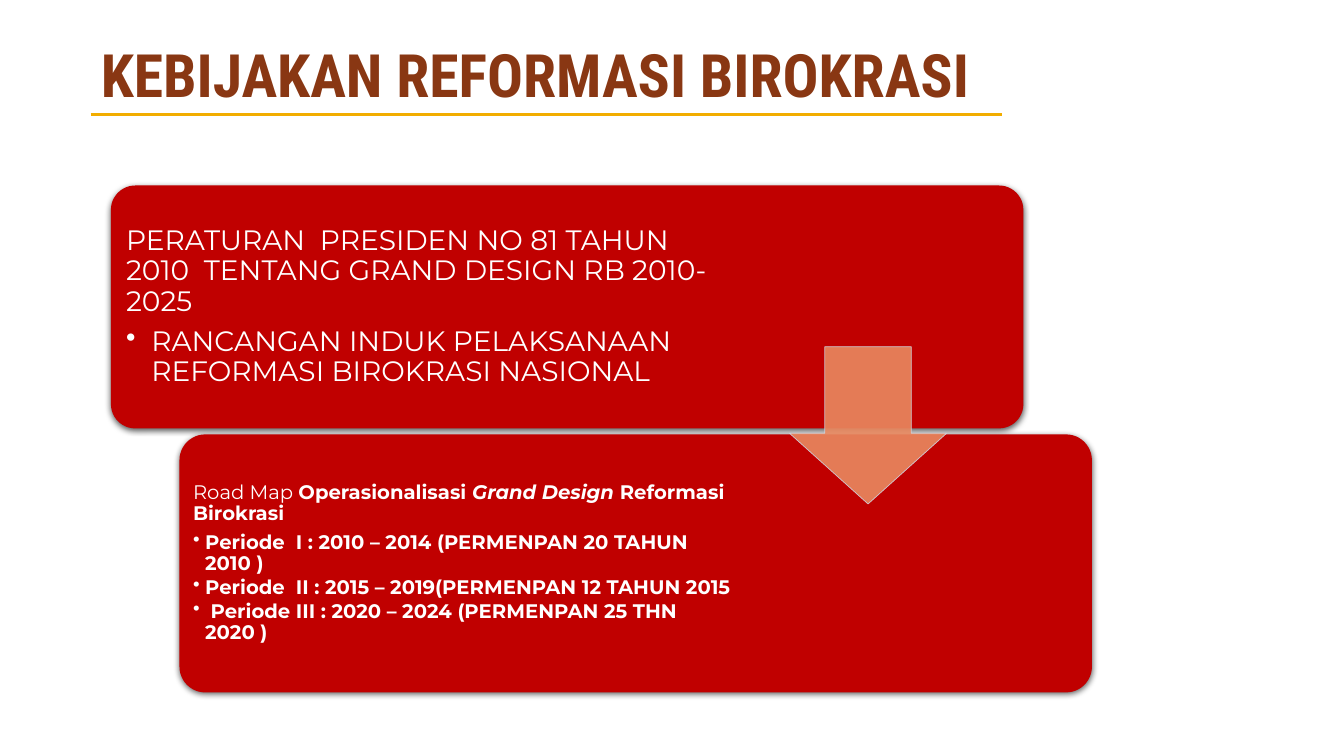
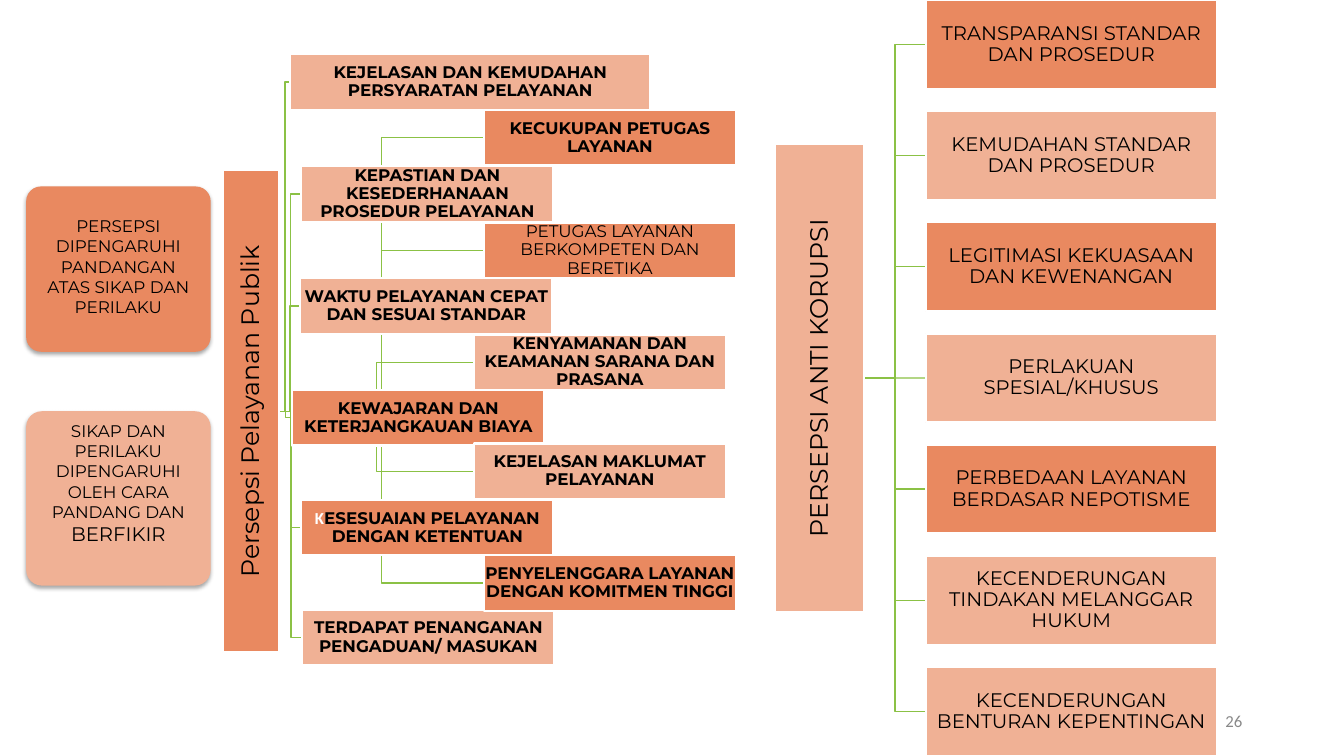
from lxml import etree
from pptx import Presentation
from pptx.dml.color import RGBColor
from pptx.enum.shapes import MSO_CONNECTOR as Connector, MSO_SHAPE as Shape
from pptx.enum.text import MSO_ANCHOR as Anchor, MSO_AUTO_SIZE as AutoSize, PP_ALIGN as Align
from pptx.oxml.ns import qn
from pptx.util import Inches, Pt

COLORS = {
    "red": "C00000", "orange": "E98960", "peach": "F0B195", "brown": "893713",
    "gold": "F2AD00", "green": "8BC145", "edge": "CDD5E2", "gray": "898989",
    "white": "FFFFFF", "black": "000000",
}
BODY_FONT = "Montserrat"
TITLE_FONT = "Roboto Condensed"
NUMBER_FONT = "Calibri"


def rgb(name):
    return RGBColor.from_string(COLORS[name])


# ---- Text ----
def add_run(paragraph, text, size=12, font=BODY_FONT, color="black", bold=False, italic=False):
    run = paragraph.add_run()
    run.text = text
    run.font.size = Pt(size)
    run.font.name = font
    run.font.color.rgb = rgb(color)
    run.font.bold = bold
    run.font.italic = italic
    return run


def set_frame(frame, margins, anchor=Anchor.MIDDLE, wrap=True):
    """Margins are left, top, right and bottom in inches."""
    left, top, right, bottom = (Inches(margin) for margin in margins)
    frame.margin_left, frame.margin_top = left, top
    frame.margin_right, frame.margin_bottom = right, bottom
    frame.vertical_anchor = anchor
    frame.word_wrap = wrap


def set_bullet(paragraph, indent):
    properties = paragraph._p.get_or_add_pPr()
    properties.set("marL", str(Inches(indent)))
    properties.set("indent", str(-Inches(indent)))
    etree.SubElement(properties, qn("a:buChar")).set("char", "•")


# ---- Shapes ----
def add_box(slide, kind, box, fill, line=None, width=1.5, adjust=()):
    shape = slide.shapes.add_shape(kind, *(Inches(length) for length in box))
    shape.shadow.inherit = False
    shape.fill.solid()
    shape.fill.fore_color.rgb = rgb(fill)
    if line:
        shape.line.color.rgb = rgb(line)
        shape.line.width = Pt(width)
    else:
        shape.line.fill.background()
    for index, value in enumerate(adjust):
        shape.adjustments[index] = value
    return shape


def set_alpha(parent, percent):
    etree.SubElement(parent, qn("a:alpha")).set("val", str(percent * 1000))


def add_shadow(shape, alpha, blur, distance):
    effects = shape._element.spPr.find(qn("a:effectLst"))
    shadow = etree.SubElement(effects, qn("a:outerShdw"), blurRad=str(Pt(blur)),
                              dist=str(Pt(distance)), dir="5400000", rotWithShape="0")
    color = etree.SubElement(shadow, qn("a:srgbClr"), val=COLORS["black"])
    set_alpha(color, alpha)


def add_line(slide, start, end, color, width):
    line = slide.shapes.add_connector(Connector.STRAIGHT,
                                      *(Inches(length) for length in (*start, *end)))
    line.line.color.rgb = rgb(color)
    line.line.width = Pt(width)
    etree.SubElement(line._element.spPr, qn("a:effectLst"))
    return line


def add_elbow(slide, start, end):
    """Draw a branch that turns halfway between start and end."""
    middle = (start[0] + end[0]) / 2
    points = [(middle, start[1]), (middle, end[1]), end]
    builder = slide.shapes.build_freeform(Inches(start[0]), Inches(start[1]))
    builder.add_line_segments([(Inches(x), Inches(y)) for x, y in points], close=False)
    elbow = builder.convert_to_shape()
    elbow.shadow.inherit = False
    elbow.fill.background()
    elbow.line.color.rgb = rgb("green")
    elbow.line.width = Pt(1)


# ---- Policy slide ----
def add_title(slide, text, box):
    title = slide.shapes.title
    title.left, title.top, title.width, title.height = (Inches(length) for length in box)
    frame = title.text_frame
    set_frame(frame, (0.1, 0.05, 0.1, 0.05), Anchor.TOP, wrap=False)
    frame.auto_size = AutoSize.SHAPE_TO_FIT_TEXT
    paragraph = frame.paragraphs[0]
    paragraph.alignment = Align.LEFT
    add_run(paragraph, text, size=42.7, font=TITLE_FONT, color="brown", bold=True)
    left, top, _, height = box
    add_line(slide, (left, top + height), (left + 9.04, top + height), "gold", 2.25)


def add_panel(slide, box, heading, bullets, size, margin, right, indent, bold):
    """Heading is a list of (text, format) runs."""
    panel = add_box(slide, Shape.ROUNDED_RECTANGLE, box, "red", adjust=[0.1])
    add_shadow(panel, 63, 4.5, 1.5)
    frame = panel.text_frame
    set_frame(frame, (margin, margin, right, margin))
    for index, runs in enumerate([heading] + [[(text, {"bold": bold})] for text in bullets]):
        paragraph = frame.add_paragraph() if index else frame.paragraphs[0]
        paragraph.alignment = Align.LEFT
        paragraph.line_spacing = 0.9
        paragraph.space_after = Pt(size * (0.15 if index else 0.35))
        if index:
            set_bullet(paragraph, indent)
        for text, style in runs:
            add_run(paragraph, text, size=size, color="white", **style)


def add_arrow(slide, box):
    arrow = add_box(slide, Shape.DOWN_ARROW, box, "orange", "edge", 0.5, [0.55, 0.45])
    for color in arrow._element.spPr.iter(qn("a:srgbClr")):
        set_alpha(color, 90)


def build_policy_slide(presentation):
    slide = presentation.slides.add_slide(presentation.slide_layouts[5])
    add_title(slide, "KEBIJAKAN REFORMASI BIROKRASI", (0.9, 0.32, 8.89, 0.82))
    add_panel(
        slide, (1.1, 1.84, 9.05, 2.41),
        [("PERATURAN  PRESIDEN NO 81 TAHUN  2010  TENTANG GRAND DESIGN RB 2010-2025", {})],
        ["RANCANGAN INDUK PELAKSANAAN REFORMASI BIROKRASI NASIONAL"],
        size=20, margin=0.08, right=2.85, indent=0.25, bold=False)
    add_panel(
        slide, (1.78, 4.31, 9.05, 2.56),
        [("Road Map ", {}), ("Operasionalisasi ", {"bold": True}),
         ("Grand Design", {"bold": True, "italic": True}),
         (" Reformasi Birokrasi", {"bold": True})],
        ["Periode  I : 2010 – 2014 (PERMENPAN 20 TAHUN 2010 )",
         "Periode  II : 2015 – 2019(PERMENPAN 12 TAHUN 2015",
         " Periode III : 2020 – 2024 (PERMENPAN 25 THN 2020 )"],
        size=14, margin=0.06, right=3.5, indent=0.12, bold=True)
    add_arrow(slide, (7.83, 3.44, 1.56, 1.56))


# ---- Perception slide ----
def add_node(slide, box, runs, fill, rotation=0):
    """Runs is a list of (text, format) pairs."""
    node = add_box(slide, Shape.RECTANGLE, box, fill, "white")
    node.rotation = rotation
    set_frame(node.text_frame, [0.01] * 4)
    paragraph = node.text_frame.paragraphs[0]
    paragraph.alignment = Align.CENTER
    paragraph.line_spacing = 0.9
    for text, style in runs:
        add_run(paragraph, text, **style)
    return node


def add_tree(slide, spine, title, spine_fill, branches):
    """Spine is the upright box; branches are (box, runs, fill)."""
    left, top, width, height = spine
    center = top + height / 2
    start = (left + width, center)
    straight = {}
    # Links lie behind every box
    for index, (box, _, _) in enumerate(branches):
        end = (box[0], box[1] + box[3] / 2)
        if abs(end[1] - center) < 0.01:
            straight[index] = add_line(slide, start, end, "green", 1)
        else:
            add_elbow(slide, start, end)
    # The spine is a wide box turned upright
    turned = (left + (width - height) / 2, center - width / 2, height, width)
    add_node(slide, turned, [(title, {"size": 18})], spine_fill, rotation=270)
    for index, branch in enumerate(branches):
        node = add_node(slide, *branch)
        if index in straight:
            straight[index].end_connect(node, 1)


def add_service_tree(slide):
    # left, top, fill, text
    rows = [
        (2.88, 0.54, "peach", "KEJELASAN DAN KEMUDAHAN PERSYARATAN PELAYANAN"),
        (2.99, 1.65, "peach", "KEPASTIAN DAN KESEDERHANAAN PROSEDUR PELAYANAN"),
        (2.98, 2.76, "peach", "WAKTU PELAYANAN CEPAT DAN SESUAI STANDAR"),
        (2.9, 3.87, "orange", "KEWAJARAN DAN KETERJANGKAUAN BIAYA"),
        (2.99, 4.96, "orange", "KESESUAIAN PELAYANAN DENGAN KETENTUAN"),
        (3, 6.05, "peach", "TERDAPAT PENANGANAN PENGADUAN/ MASUKAN"),
        (4.8, 1.09, "orange", "KECUKUPAN PETUGAS LAYANAN"),
        (4.8, 2.21, "orange", "PETUGAS LAYANAN BERKOMPETEN DAN BERETIKA"),
        (4.7, 4.4, "peach", "KEJELASAN MAKLUMAT PELAYANAN"),
        (4.7, 3.32, "peach", "KENYAMANAN DAN KEAMANAN SARANA DAN PRASANA"),
        (4.8, 5.51, "orange", "PENYELENGGARA LAYANAN DENGAN KOMITMEN TINGGI"),
    ]
    branches = []
    for index, (left, top, fill, text) in enumerate(rows):
        width = 2.5 if index else 3.57
        runs = [(text, {"bold": not text.startswith("PETUGAS")})]
        if text.startswith("KESESUAIAN"):
            initial = {"bold": True, "font": NUMBER_FONT, "color": "white"}
            runs = [(text[0], initial), (text[1:], {"bold": True})]
        branches.append(((left, top, width, 0.55), runs, fill))
    add_tree(slide, (2.21, 1.69, 0.56, 4.78), "Persepsi Pelayanan Publik", "orange", branches)


def add_integrity_tree(slide):
    rows = [
        ("orange", "TRANSPARANSI STANDAR DAN PROSEDUR"),
        ("peach", "KEMUDAHAN STANDAR DAN PROSEDUR"),
        ("orange", "LEGITIMASI KEKUASAAN DAN KEWENANGAN"),
        ("peach", "PERLAKUAN SPESIAL/KHUSUS"),
        ("orange", "PERBEDAAN LAYANAN BERDASAR NEPOTISME"),
        ("peach", "KECENDERUNGAN TINDAKAN MELANGGAR HUKUM"),
        ("peach", "KECENDERUNGAN BENTURAN KEPENTINGAN"),
    ]
    height = 0.88
    step = (7.5 - height) / (len(rows) - 1)
    branches = [((9.18, index * step, 2.89, height), [(text, {"size": 14})], fill)
                for index, (fill, text) in enumerate(rows)]
    add_tree(slide, (7.69, 1.43, 0.88, 4.64), "PERSEPSI ANTI KORUPSI", "peach", branches)


def add_note(slide, box, runs, fill, top_margin):
    note = add_box(slide, Shape.ROUNDED_RECTANGLE, box, fill, adjust=[0.09])
    add_shadow(note, 35, 3.1, 1.8)
    set_frame(note.text_frame, (0.1, top_margin, 0.1, 0.05), Anchor.TOP)
    paragraph = note.text_frame.paragraphs[0]
    paragraph.alignment = Align.CENTER
    for text, size in runs:
        add_run(paragraph, text, size=size)


def add_page_number(slide, text, box):
    number = slide.shapes.add_textbox(*(Inches(length) for length in box))
    set_frame(number.text_frame, (0.1, 0.05, 0.1, 0.05))
    paragraph = number.text_frame.paragraphs[0]
    paragraph.alignment = Align.RIGHT
    add_run(paragraph, text, font=NUMBER_FONT, color="gray")


def build_perception_slide(presentation):
    slide = presentation.slides.add_slide(presentation.slide_layouts[6])
    add_page_number(slide, "26", (9.42, 6.95, 3, 0.4))
    add_service_tree(slide)
    add_note(slide, (0.26, 1.85, 1.83, 1.64),
             [("PERSEPSI DIPENGARUHI PANDANGAN ATAS SIKAP DAN PERILAKU", 12)], "orange", 0.25)
    add_note(slide, (0.26, 4.08, 1.83, 1.73),
             [("SIKAP DAN PERILAKU DIPENGARUHI OLEH CARA PANDANG DAN ", 12), ("BERFIKIR", 14)],
             "peach", 0.05)
    add_integrity_tree(slide)


def main():
    presentation = Presentation()
    presentation.slide_width = Inches(13.33)
    presentation.slide_height = Inches(7.5)
    build_policy_slide(presentation)
    build_perception_slide(presentation)
    presentation.save("out.pptx")


if __name__ == "__main__":
    main()
